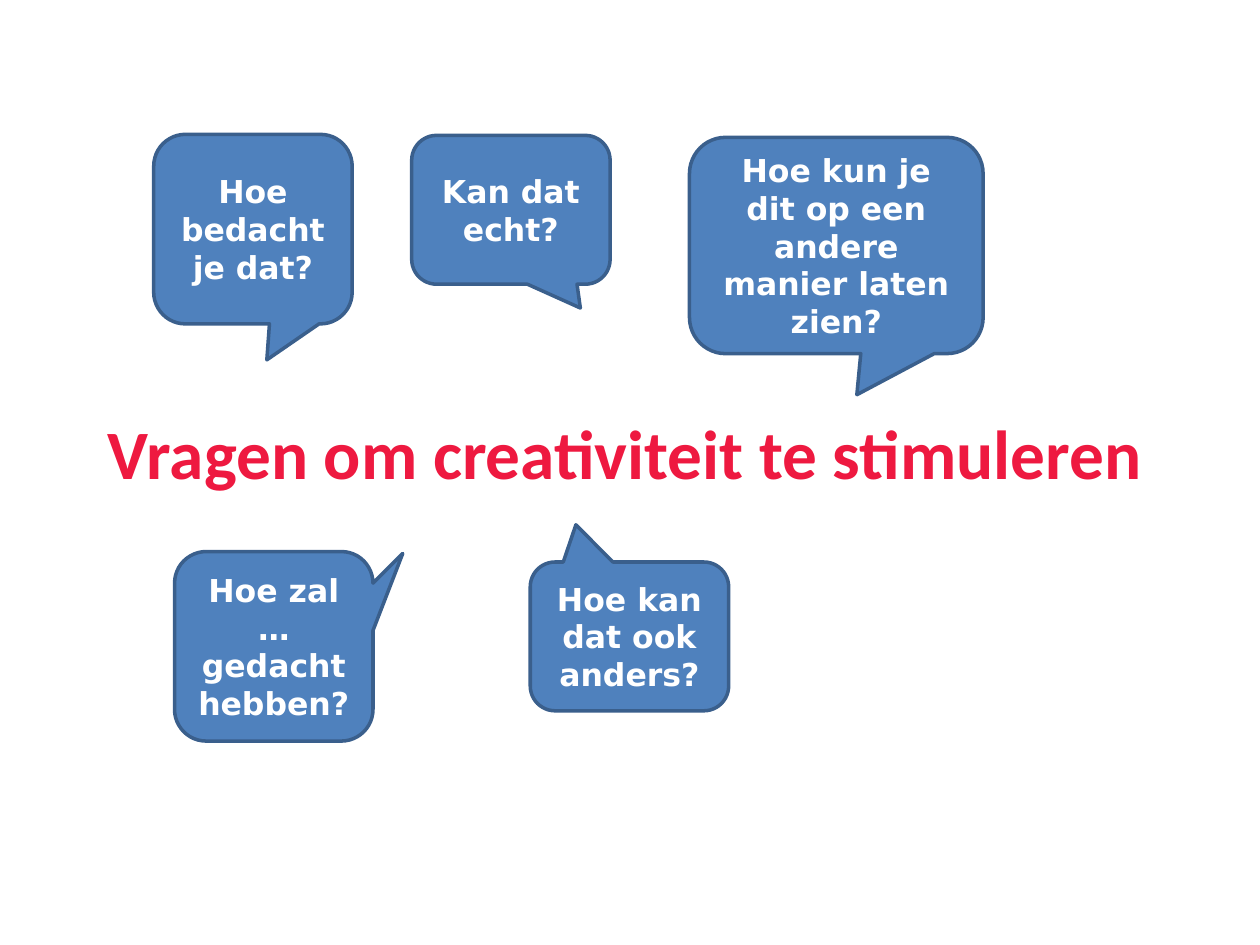
from dataclasses import dataclass

from pptx import Presentation
from pptx.dml.color import RGBColor
from pptx.enum import shapes, text
from pptx.util import Cm, Pt


@dataclass(frozen=True)
class Theme:
    heading: RGBColor = RGBColor(0xEE, 0x19, 0x40)
    bubble: RGBColor = RGBColor(0x4F, 0x81, 0xBD)
    outline: RGBColor = RGBColor(0x3A, 0x5F, 0x8C)
    question: RGBColor = RGBColor(0xFF, 0xFF, 0xFF)
    heading_font: str = "Calibri"
    question_font: str = "DejaVu Sans"
    heading_size: float = 39.6
    question_size: float = 18
    outline_width: float = 2


THEME = Theme()
CORNER = 0.167

QUESTIONS = [
    ("Hoe bedacht je dat?", (3.1, 2.71, 4.0, 3.82), (0.07, 0.69)),
    ("Kan dat echt?", (8.3, 2.73, 4.0, 3.0), (0.35, 0.66)),
    ("Hoe zal … gedacht hebben?", (3.52, 11.12, 4.0, 3.82), (0.65, -0.49)),
    ("Hoe kan dat ook anders?", (10.69, 11.33, 4.0, 3.0), (-0.27, -0.75)),
    ("Hoe kun je dit op een andere manier laten zien?",
     (13.9, 2.77, 5.92, 4.36), (0.07, 0.69)),
]


def place(part, box):
    for side, length in zip(("left", "top", "width", "height"), box):
        setattr(part, side, Cm(length))


def write(part, wording, name, size, color):
    frame = part.text_frame
    frame.text = wording
    paragraph = frame.paragraphs[0]
    paragraph.alignment = text.PP_ALIGN.CENTER
    frame_format = {
        "word_wrap": True,
        "auto_size": text.MSO_AUTO_SIZE.NONE,
        "vertical_anchor": text.MSO_ANCHOR.MIDDLE,
    }
    font_format = {"name": name, "size": Pt(size), "bold": True}
    font = paragraph.runs[0].font
    for target, values in ((frame, frame_format), (font, font_format)):
        for attribute, value in values.items():
            setattr(target, attribute, value)
    font.color.rgb = color


def add_heading(slide, wording, box):
    heading = slide.shapes.title
    place(heading, box)
    write(heading, wording, THEME.heading_font, THEME.heading_size, THEME.heading)


def add_bubble(slide, question, box, tail):
    bubble = slide.shapes.add_shape(
        shapes.MSO_SHAPE.ROUNDED_RECTANGULAR_CALLOUT, *map(Cm, box))
    for index, value in enumerate((*tail, CORNER)):
        bubble.adjustments[index] = value
    bubble.shadow.inherit = False
    bubble.fill.solid()
    bubble.fill.fore_color.rgb = THEME.bubble
    bubble.line.color.rgb = THEME.outline
    bubble.line.width = Pt(THEME.outline_width)
    write(bubble, question, THEME.question_font, THEME.question_size, THEME.question)


def main():
    deck = Presentation()
    deck.slide_width, deck.slide_height = Cm(25.4), Cm(19.05)
    slide = deck.slides.add_slide(deck.slide_layouts.get_by_name("Title Only"))
    add_heading(slide, "Vragen om creativiteit te stimuleren",
                (1.17, 7.52, 22.86, 3.18))
    for question, box, tail in QUESTIONS:
        add_bubble(slide, question, box, tail)
    deck.save("out.pptx")


if __name__ == "__main__":
    main()
